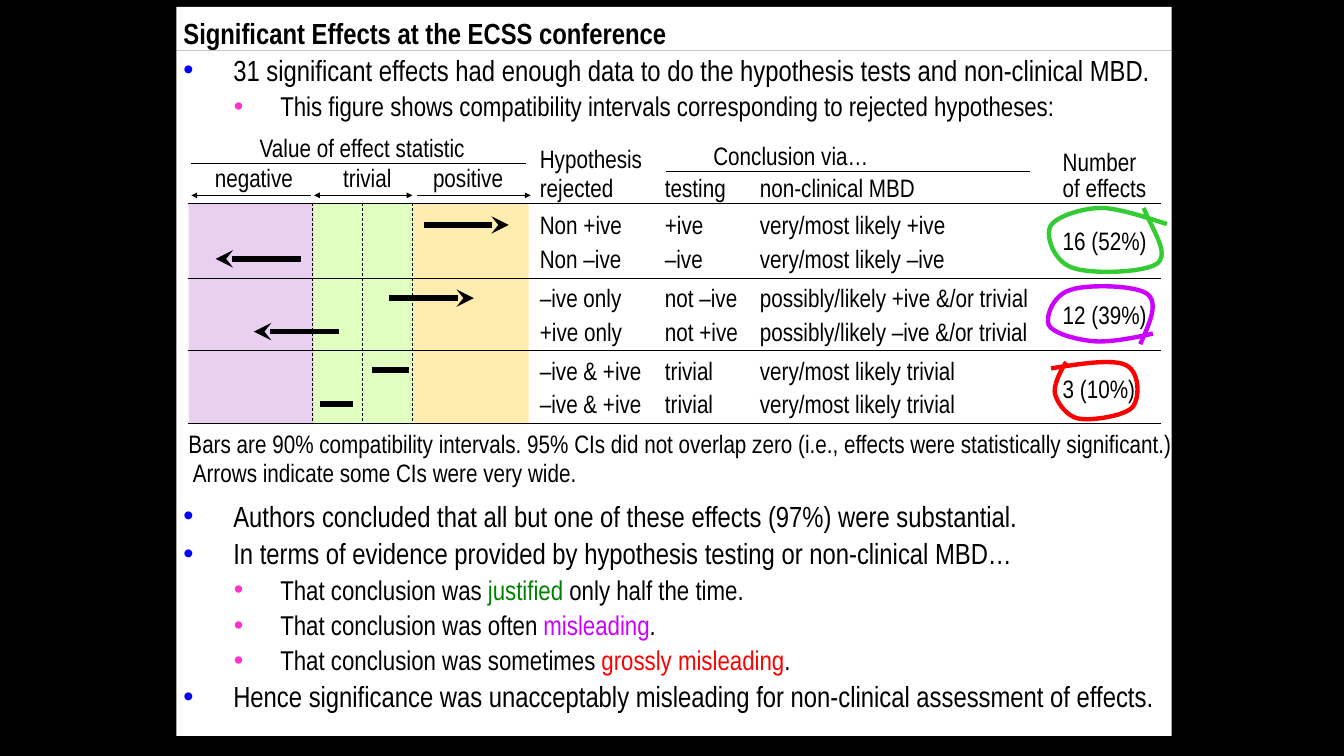
"""Builds the slide on significant effects at the ECSS conference."""
from lxml import etree
from pptx import Presentation
from pptx import util as u
from pptx.dml.color import RGBColor
from pptx.enum import dml, shapes, text
from pptx.oxml.ns import qn

Pt = u.Pt
FONT = "Arial Narrow"
BLACK = RGBColor(0x00, 0x00, 0x00)
WHITE = RGBColor(0xFF, 0xFF, 0xFF)
BLUE = RGBColor(0x00, 0x00, 0xFF)
PINK = RGBColor(0xFF, 0x33, 0xCC)
DARK_GREEN = RGBColor(0x00, 0x80, 0x00)
GREEN = RGBColor(0x33, 0xCC, 0x33)
PURPLE = RGBColor(0xCC, 0x00, 0xFF)
RED = RGBColor(0xFF, 0x00, 0x00)
YELLOW_BAND = RGBColor(0xFF, 0xEC, 0xAF)
LILAC_BAND = RGBColor(0xEA, 0xD0, 0xF0)
GREEN_BAND = RGBColor(0xE0, 0xFF, 0xC1)

deck = Presentation()
deck.slide_width, deck.slide_height = Pt(1386.72), Pt(779.76)
page = deck.slides.add_slide(deck.slide_layouts[1])
page.background.fill.solid()
page.background.fill.fore_color.rgb = BLACK


def add_label(words, left, top, width, align=text.PP_ALIGN.LEFT):
    box = page.shapes.add_textbox(Pt(left), Pt(top), Pt(width), Pt(31.7))
    frame = box.text_frame
    frame.word_wrap = True
    frame.margin_left = frame.margin_right = frame.margin_top = frame.margin_bottom = 0
    para = frame.paragraphs[0]
    para.text = words
    para.alignment = align
    para.font.name, para.font.size, para.font.color.rgb = FONT, Pt(26), BLACK


def add_line(x1, y1, x2, y2, width=0.75, dash=None, **ends):
    line = page.shapes.add_connector(
        shapes.MSO_CONNECTOR.STRAIGHT, Pt(x1), Pt(y1), Pt(x2), Pt(y2))
    line.line.color.rgb, line.line.width = BLACK, Pt(width)
    if dash:
        line.line.dash_style = dash
    for end, arrow in sorted(ends.items()):
        etree.SubElement(line.line._get_or_add_ln(), qn(f"a:{end}"), type=arrow)
    etree.SubElement(line._element.spPr, qn("a:effectLst"))


title, body = page.shapes.title, page.placeholders[1]
for holder, top, height, inset in [(title, 7, 45, 7), (body, 52, 707, 0)]:
    holder.left, holder.top, holder.width, holder.height = Pt(182), Pt(top), Pt(1027), Pt(height)
    holder.fill.solid()
    holder.fill.fore_color.rgb = WHITE
    frame = holder.text_frame
    frame.auto_size = text.MSO_AUTO_SIZE.NONE
    frame.vertical_anchor = text.MSO_ANCHOR.TOP
    frame.margin_left = frame.margin_right = Pt(7.2)
    frame.margin_top, frame.margin_bottom = Pt(inset), 0

heading = title.text_frame.paragraphs[0]
heading.text = "Significant Effects at the ECSS conference"
heading.alignment = text.PP_ALIGN.LEFT
heading.line_spacing, heading.space_before = 1.05, Pt(1)
heading.font.name, heading.font.size = FONT, Pt(30)
heading.font.bold, heading.font.color.rgb = True, BLACK

FIGURE_GAP = 386
bullets = [
    (0, 1, [("31 significant effects had enough data to do the hypothesis tests and non-clinical MBD.", BLACK)]),
    (1, 1, [("This figure shows compatibility intervals corresponding to rejected hypotheses:", BLACK)]),
    (0, FIGURE_GAP, [("Authors concluded that all but one of these effects (97%) were substantial.", BLACK)]),
    (0, 1, [("In terms of evidence provided by hypothesis testing or non-clinical MBD…", BLACK)]),
    (1, 1, [("That conclusion was ", BLACK), ("justified", DARK_GREEN), (" only half the time.", BLACK)]),
    (1, 1, [("That conclusion was often ", BLACK), ("misleading", PURPLE), (".", BLACK)]),
    (1, 1, [("That conclusion was sometimes ", BLACK), ("grossly misleading", RED), (".", BLACK)]),
    (0, 1, [("Hence significance was unacceptably misleading for non-clinical assessment of effects.", BLACK)]),
]
level_styles = [(30, 51.5, 51.5, BLUE), (28, 100, 48, PINK)]
for index, (level, gap, spans) in enumerate(bullets):
    size, margin, hanging, bullet_color = level_styles[level]
    frame = body.text_frame
    para = frame.add_paragraph() if index else frame.paragraphs[0]
    para.level = level
    para.line_spacing, para.space_before = 1.05, Pt(gap)
    properties = para._p.get_or_add_pPr()
    properties.set("marL", str(Pt(margin)))
    properties.set("indent", str(-Pt(hanging)))
    color = etree.SubElement(properties, qn("a:buClr"))
    etree.SubElement(color, qn("a:srgbClr"), val=str(bullet_color))
    etree.SubElement(properties, qn("a:buChar"), char="•")
    para.font.name, para.font.size = FONT, Pt(size)
    for words, span_color in spans:
        span = para.add_run()
        span.text = words
        span.font.color.rgb = span_color

TOP, BOTTOM = 209.5, 437
for left, width, color in [(409.5, 136, YELLOW_BAND), (194.5, 142, LILAC_BAND), (324, 102, GREEN_BAND)]:
    band = page.shapes.add_shape(
        shapes.MSO_SHAPE.RECTANGLE, Pt(left), Pt(TOP), Pt(width), Pt(BOTTOM - TOP))
    band.shadow.inherit = False
    band.fill.solid()
    band.fill.fore_color.rgb = color
    band.line.fill.background()
for x in (322, 373.5, 425):
    add_line(x, TOP, x, BOTTOM, dash=dml.MSO_LINE.DASH)
for y in (TOP, 287.5, 361.5, BOTTOM):
    add_line(194.5, y, 1198, y)
add_line(197, 168.5, 543, 168.5)
add_line(687, 177, 1063, 177)

add_line(197.5, 201.5, 320.5, 201.5, headEnd="triangle")
add_line(324, 201.5, 425.5, 201.5, headEnd="triangle", tailEnd="triangle")
add_line(430, 201.5, 547.5, 201.5, tailEnd="triangle")

HYPOTHESIS, TESTING, MBD, NUMBER = (557, 110), (686, 95), (784, 285), (1096.5, 95)
add_label("Value of effect statistic", 268, 137, 225)
for words, left, width in [("negative", 218, 88), ("trivial", 353, 52), ("positive", 444, 78)]:
    add_label(words, left, 167, width, text.PP_ALIGN.CENTER)
add_label("Conclusion via…", 736, 145, 170)
for words, column, top in [
    ("Hypothesis", HYPOTHESIS, 148), ("rejected", HYPOTHESIS, 177.5),
    ("testing", TESTING, 177.5), ("non-clinical MBD", MBD, 177.5),
    ("Number", NUMBER, 151), ("of effects", NUMBER, 177.5),
    ("16 (52%)", NUMBER, 232), ("12 (39%)", NUMBER, 309), ("3 (10%)", NUMBER, 385),
]:
    add_label(words, column[0], top, column[1])

rows = [
    (216, 525, 437, "stealth", "Non +ive", "+ive", "very/most likely +ive"),
    (251, 222.5, 310.5, "stealth", "Non –ive", "–ive", "very/most likely –ive"),
    (291.5, 489, 401.5, "stealth", "–ive only", "not –ive", "possibly/likely +ive &/or trivial"),
    (326, 262, 350, "stealth", "+ive only", "not +ive", "possibly/likely –ive &/or trivial"),
    (366, 422.5, 384, "none", "–ive & +ive", "trivial", "very/most likely trivial"),
    (401, 364.5, 330, "none", "–ive & +ive", "trivial", "very/most likely trivial"),
]
for top, start, end, arrow, *cells in rows:
    add_line(start, top + 16, end, top + 16, width=6, headEnd=arrow)
    for words, (left, width) in zip(cells, (HYPOTHESIS, TESTING, MBD)):
        add_label(words, left, top, width)

add_label("Bars are 90% compatibility intervals. 95% CIs did not overlap zero "
          "(i.e., effects were statistically significant.)", 194.5, 442, 1030)
add_label("Arrows indicate some CIs were very wide.", 199, 471.5, 420)

STEPS = 12
loops = [
    (GREEN, [(1204, 231), (1193, 228), (1155, 214), (1135, 214.5), (1115, 215), (1088, 224),
             (1083.5, 234), (1078.5, 245), (1088.5, 271), (1107.5, 276.5), (1126, 283),
             (1182, 281.5), (1194.5, 271.5), (1206.5, 260.5), (1190, 239), (1180, 214.5)]),
    (PURPLE, [(1189.5, 344), (1179.5, 346.5), (1147, 353.5), (1129, 352), (1111, 350.5),
              (1086.5, 344), (1082, 335), (1078.5, 326), (1087, 304), (1104.5, 299),
              (1121, 293), (1171.5, 294), (1183.5, 303), (1196, 312.5), (1186, 333.5), (1176.5, 355)]),
    (RED, [(1100, 373.5), (1096.5, 378.5), (1086.5, 396.5), (1088.5, 406), (1091, 416),
           (1101, 430), (1114, 432), (1127.5, 434), (1160.5, 429), (1168.5, 420),
           (1176.5, 410.5), (1176, 383), (1161.5, 376.5), (1147.5, 370), (1116, 375), (1084.5, 380)]),
]
for color, knots in loops:
    outline = page.shapes.build_freeform(Pt(knots[0][0]), Pt(knots[0][1]))
    for first in range(0, len(knots) - 1, 3):
        curve = knots[first:first + 4]
        points = []
        for step in range(1, STEPS + 1):
            t = step / STEPS
            weights = ((1 - t) ** 3, 3 * t * (1 - t) ** 2, 3 * t * t * (1 - t), t ** 3)
            points.append([Pt(sum(w * knot[axis] for w, knot in zip(weights, curve)))
                           for axis in (0, 1)])
        outline.add_line_segments(points, close=False)
    loop = outline.convert_to_shape()
    loop.shadow.inherit = False
    loop.fill.background()
    loop.line.color.rgb, loop.line.width = color, Pt(4.5)

deck.save("out.pptx")
